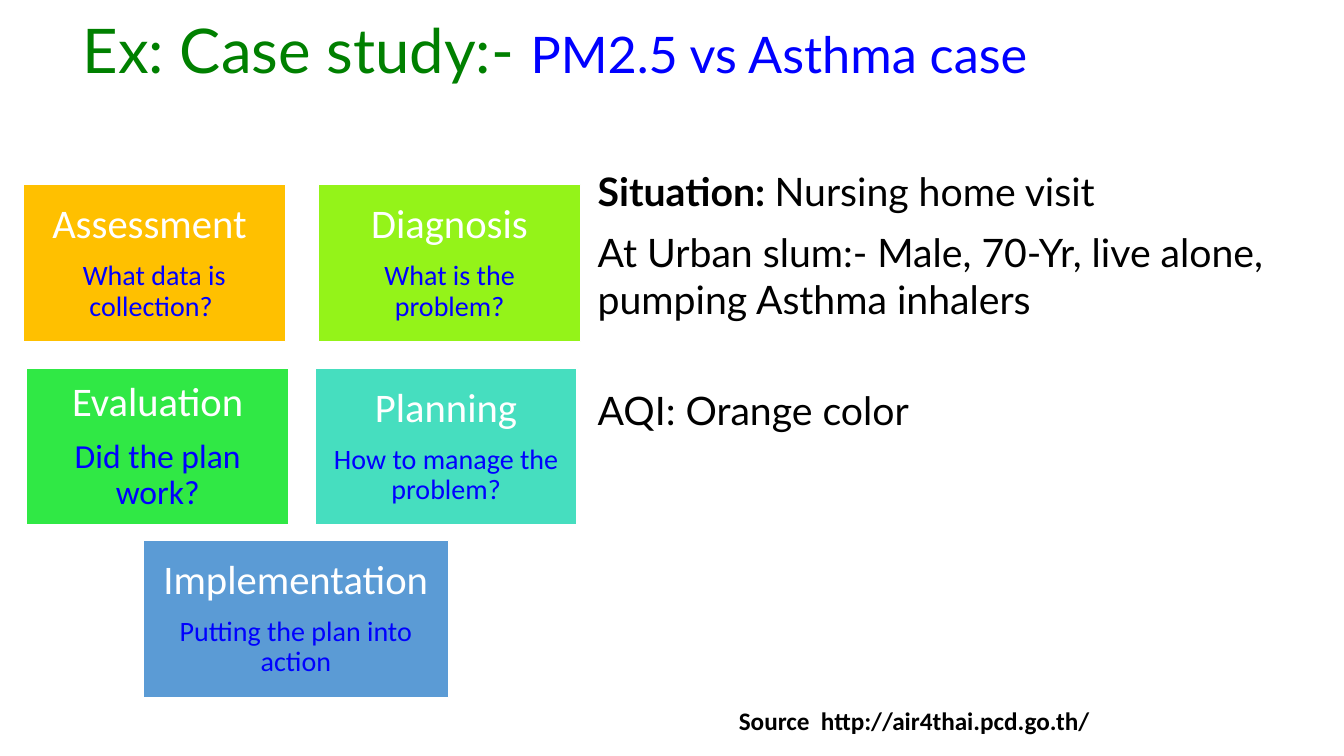
from dataclasses import dataclass

from pptx import Presentation
from pptx import util as u
from pptx.dml.color import RGBColor
from pptx.enum import shapes, text

CELL = u.Inches(0.1)  # grid unit for columns and rows


@dataclass(frozen=True)
class Theme:
    head: str = "Lato"
    tile: str = "Calibri"
    black: str = "000000"
    white: str = "FFFFFF"
    green: str = "008000"
    blue: str = "0000FF"
    title: int = 44
    sub: int = 36
    body: int = 28
    step: int = 29
    ask: int = 20
    big: int = 24
    note: int = 18


T = Theme()

# Each row: top, shift from centre, tile width, gap, tiles (name, question, size, fill)
STEPS = [
    (0, 0, 26, 3.3, [
        ("Assessment ", "What data is collection? ", T.ask, "FFC000"),
        ("Diagnosis", "What is the problem?", T.ask, "94F319")]),
    (18.2, 0, 26, 2.6, [
        ("Evaluation", "Did the plan work?", T.big, "30E845"),
        ("Planning", "How to manage the problem?", T.ask, "46DEBF")]),
    (35.3, -0.6, 30.3, 0, [
        ("Implementation", "Putting the plan into action", T.ask, "5B9BD5")]),
]


def cells(*box):
    return [round(n * CELL) for n in box]


def style(font, name, size, color, bold=False):
    font.name, font.size, font.bold = name, u.Pt(size), bold
    font.color.rgb = RGBColor.from_string(color)


def frame(slide, box, anchor=text.MSO_ANCHOR.TOP):
    tf = slide.shapes.add_textbox(*cells(*box)).text_frame
    tf.word_wrap, tf.vertical_anchor = True, anchor
    return tf


def title(slide, box):
    para = frame(slide, box, text.MSO_ANCHOR.MIDDLE).paragraphs[0]
    para.line_spacing = 0.9
    for words, size, color in [("Ex: Case study:- ", T.title, T.green),
                               ("PM2.5 vs Asthma case", T.sub, T.blue)]:
        run = para.add_run()
        run.text = words
        style(run.font, T.head, size, color)


def story(slide, box):
    tf = frame(slide, box)
    para = tf.paragraphs[0]
    for words, bold in [("Situation: ", True), ("Nursing home visit", False)]:
        run = para.add_run()
        run.text = words
        style(run.font, T.head, T.body, T.black, bold)
    para = tf.add_paragraph()
    para.text = "At Urban slum:- Male, 70-Yr, live alone, pumping Asthma inhalers"
    para.space_before = u.Pt(10)
    style(para.font, T.head, T.body, T.black)


def line(slide, box, words, name, size, bold=False):
    para = frame(slide, box).paragraphs[0]
    para.text = words
    style(para.font, name, size, T.black, bold)


def tile(slide, box, name, ask, size, fill):
    rect = slide.shapes.add_shape(shapes.MSO_SHAPE.RECTANGLE, *cells(*box))
    rect.shadow.inherit = False
    rect.fill.solid()
    rect.fill.fore_color.rgb = RGBColor.from_string(fill)
    rect.line.color.rgb = RGBColor.from_string(T.white)
    rect.line.width = u.Pt(1)
    tf = rect.text_frame
    tf.word_wrap, tf.vertical_anchor = True, text.MSO_ANCHOR.MIDDLE
    tf.margin_left = tf.margin_right = u.Inches(0.12)
    tf.margin_top = tf.margin_bottom = u.Inches(0.12)
    top, low = tf.paragraphs[0], tf.add_paragraph()
    top.space_after = u.Pt(10)
    for para, words, pts, color in [(top, name, T.step, T.white),
                                    (low, ask, size, T.blue)]:
        para.text = words
        para.alignment = text.PP_ALIGN.CENTER
        para.line_spacing = 0.9
        style(para.font, T.tile, pts, color)


def cycle(slide, box):
    left, top, wide, high = box
    tall = high - STEPS[-1][0]
    for drop, shift, w, gap, tiles in STEPS:
        span = len(tiles) * (w + gap) - gap
        x = left + (wide - span) / 2 + shift
        for i, item in enumerate(tiles):
            tile(slide, (x + i * (w + gap), top + drop, w, tall), *item)


def main():
    prs = Presentation()
    prs.slide_width, prs.slide_height = u.Inches(13.33), u.Inches(7.5)
    slide = prs.slides.add_slide(prs.slide_layouts[6])
    # Heading
    title(slide, (7.2, 1.4, 119.6, 7.9))
    # Situation on the right
    story(slide, (58.3, 16.1, 73.8, 26.8))
    # Nursing process on the left
    cycle(slide, (2.3, 18.3, 55.3, 50.9))
    # Air quality and source
    line(slide, (58.3, 37.8, 64.5, 5.7), "AQI: Orange color", T.head, T.body)
    line(slide, (72.3, 69.5, 60, 4), "Source  http://air4thai.pcd.go.th/",
         T.tile, T.note, True)
    prs.save("out.pptx")


if __name__ == "__main__":
    main()
